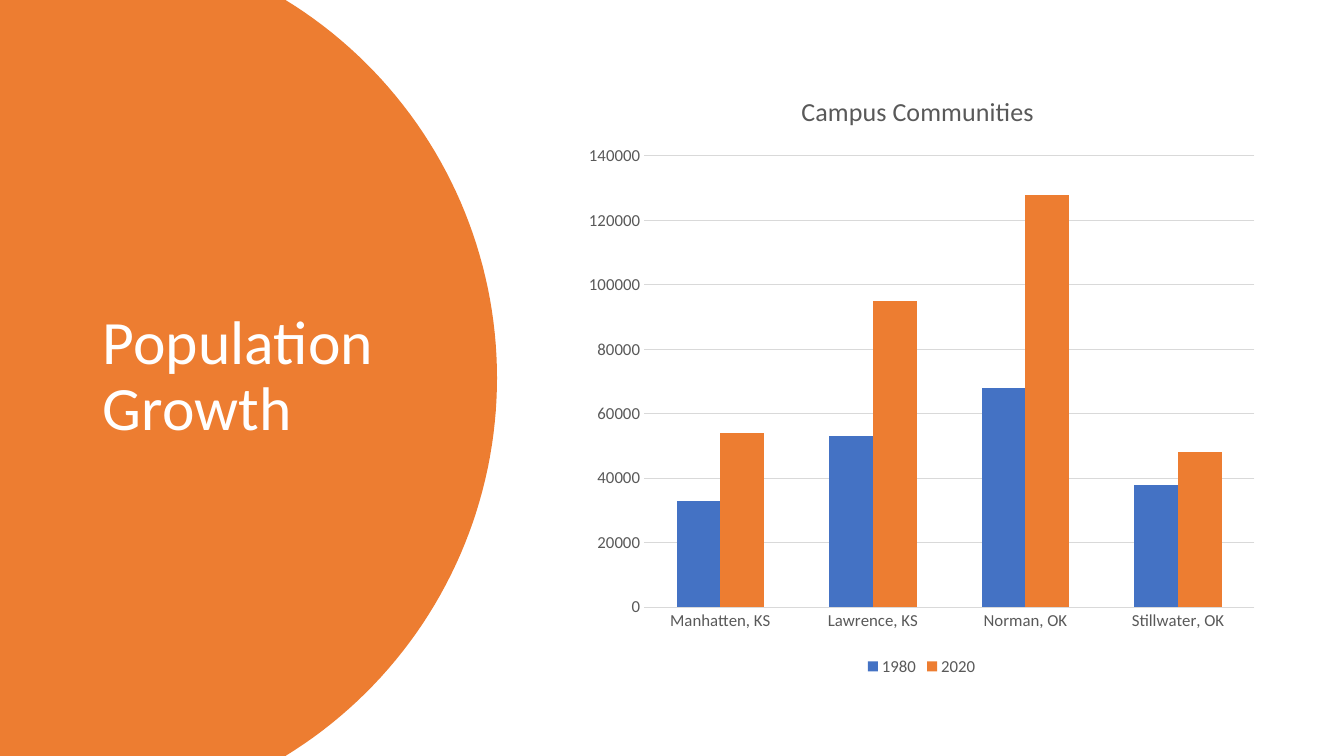
from math import asin, cos, sin

from lxml.etree import SubElement
from pptx import Presentation
from pptx.chart.data import CategoryChartData
from pptx.dml.color import RGBColor
from pptx.enum.chart import XL_CHART_TYPE, XL_LEGEND_POSITION, XL_TICK_MARK
from pptx.enum.text import MSO_ANCHOR, PP_ALIGN
from pptx.oxml.ns import qn
from pptx.util import Inches, Pt

FONT = "Calibri"
ORANGE, BLUE, WHITE = "ED7D31", "4472C4", "FFFFFF"
GREY_TEXT, GRID = "595959", "D9D9D9"
WIDTH, HEIGHT = 13.33, 7.5
COMMUNITIES = ["Manhatten, KS", "Lawrence, KS", "Norman, OK", "Stillwater, OK"]
POPULATION = {
    "1980": ([33000, 53000, 68000, 38000], BLUE),
    "2020": ([54000, 95000, 128000, 48000], ORANGE),
}


def color(value):
    return RGBColor.from_string(value)


def paint(fill, value):
    fill.solid()
    fill.fore_color.rgb = color(value)


def style(font, size, value):
    font.name = FONT
    font.size = Pt(size)
    font.bold = False
    font.color.rgb = color(value)


def place(element, index, **fractions):
    """Give a chart part a manual layout in fractions of the chart area."""
    for old in element.findall(qn("c:layout")):
        element.remove(old)
    layout = SubElement(element, qn("c:layout"))
    element.insert(index, layout)
    manual = SubElement(layout, qn("c:manualLayout"))
    if "w" in fractions:
        SubElement(manual, qn("c:layoutTarget")).set("val", "inner")
    for side in ("xMode", "yMode"):
        SubElement(manual, qn("c:" + side)).set("val", "edge")
    for name, value in fractions.items():
        SubElement(manual, qn("c:" + name)).set("val", str(value))


def add_round_panel(slide):
    """Panel on the left, bounded by a circular arc on its right side."""
    radius, center_x, center_y, steps = 4.4, 0.53, HEIGHT / 2, 80
    limit = asin(center_y / radius)
    angles = [limit * (2 * step / steps - 1) for step in range(steps + 1)]
    arc = [(Inches(center_x + radius * cos(angle)),
            Inches(center_y + radius * sin(angle))) for angle in angles]
    builder = slide.shapes.build_freeform(0, 0)
    builder.add_line_segments(arc + [(0, Inches(HEIGHT))], close=True)
    panel = builder.convert_to_shape()
    panel.shadow.inherit = False
    paint(panel.fill, ORANGE)
    panel.line.fill.background()


def set_title(slide, text):
    title = slide.shapes.title
    title.left, title.top = Inches(0.92), Inches(0.7)
    title.width, title.height = Inches(3.23), Inches(6.09)
    frame = title.text_frame
    frame.text = text
    frame.word_wrap = True
    frame.vertical_anchor = MSO_ANCHOR.MIDDLE
    para = frame.paragraphs[0]
    para.alignment = PP_ALIGN.LEFT
    para.line_spacing = 0.9
    style(para.runs[0].font, 44, WHITE)


def style_axis(axis):
    axis.major_tick_mark = axis.minor_tick_mark = XL_TICK_MARK.NONE
    axis.format.line.fill.background()
    style(axis.tick_labels.font, 12, GREY_TEXT)


def add_population_chart(slide):
    data = CategoryChartData()
    data.categories = COMMUNITIES
    for year, (values, _) in POPULATION.items():
        data.add_series(year, values)
    chart = slide.shapes.add_chart(
        XL_CHART_TYPE.COLUMN_CLUSTERED, Inches(5.7), Inches(0.7),
        Inches(6.88), Inches(6.05), data).chart
    style(chart.font, 10, "000000")

    # Chart title
    chart.has_title = True
    frame = chart.chart_title.text_frame
    frame.text = "Campus Communities"
    style(frame.paragraphs[0].runs[0].font, 18.6, GREY_TEXT)
    chart.chart_title.include_in_layout = False

    # Columns
    plot = chart.plots[0]
    plot.gap_width, plot.overlap = 150, 0
    plot.vary_by_categories = False
    for series, (_, fill) in zip(plot.series, POPULATION.values()):
        paint(series.format.fill, fill)

    # Axes and gridlines
    style_axis(chart.category_axis)
    values = chart.value_axis
    style_axis(values)
    values.minimum_scale, values.maximum_scale = 0, 140000
    values.major_unit = 20000
    values.tick_labels.number_format = "General"
    values.tick_labels.number_format_is_linked = False
    values.has_major_gridlines = True
    grid = values.major_gridlines.format.line
    grid.width = Pt(0.75)
    paint(grid.fill, GRID)

    # Legend
    chart.has_legend = True
    chart.legend.position = XL_LEGEND_POSITION.BOTTOM
    chart.legend.include_in_layout = False
    style(chart.legend.font, 12, GREY_TEXT)

    # Positions inside the chart
    area = chart.element.find(qn("c:chart"))
    place(area.find(qn("c:title")), 1, x=0.32, y=0.03)
    place(area.find(qn("c:plotArea")), 0, x=0.1, y=0.14, w=0.88, h=0.74)


def main():
    deck = Presentation()
    deck.slide_width, deck.slide_height = Inches(WIDTH), Inches(HEIGHT)
    slide = deck.slides.add_slide(deck.slide_layouts[5])
    paint(slide.background.fill, WHITE)
    add_round_panel(slide)
    set_title(slide, "Population Growth")
    # Bring the title in front of the panel
    slide.shapes.element.append(slide.shapes.title.element)
    add_population_chart(slide)
    deck.save("out.pptx")


if __name__ == "__main__":
    main()
